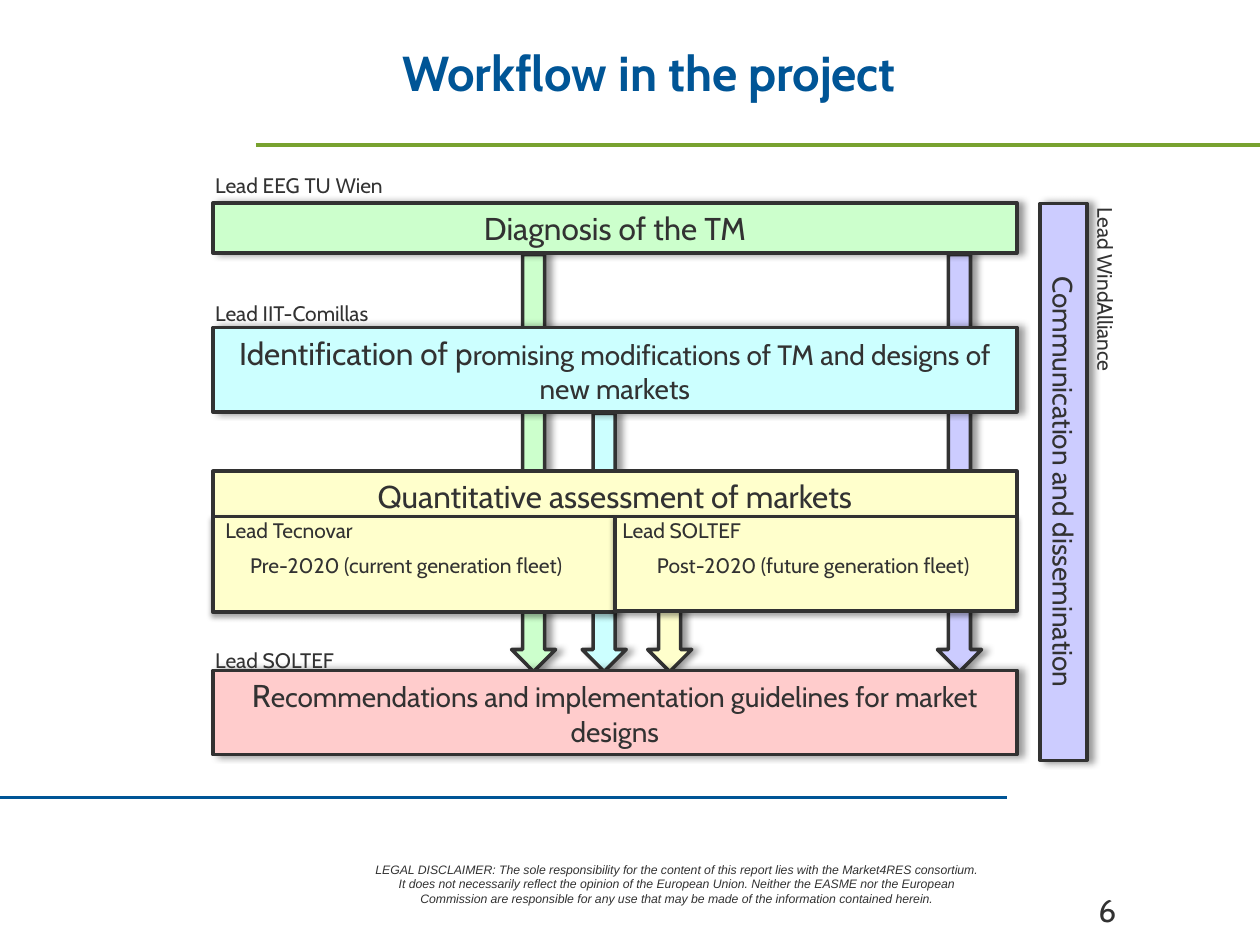
from typing import NamedTuple, Optional

from lxml.etree import SubElement
from pptx import Presentation
from pptx.dml.color import RGBColor
from pptx.enum.shapes import MSO_CONNECTOR as Connector, MSO_SHAPE as Shape
from pptx.enum.text import MSO_ANCHOR as Anchor, MSO_AUTO_SIZE as AutoSize, PP_ALIGN as Align
from pptx.oxml.ns import qn
from pptx.util import Emu, Pt

EMU_PER_PX = 9144
INK, BLUE, GREEN = "323232", "005596", "78A22F"
LIME, CYAN, YELLOW, LILAC, PINK = "CCFFCC", "CCFFFF", "FFFFCC", "CCCCFF", "FFCCCC"
STAGE_LEFT, STAGE_WIDTH = 169, 638
HALF_WIDTH = STAGE_WIDTH // 2
ARROW_WIDTH, ARROW_END = 35, 533
LABEL_WIDTH, LABEL_HEIGHT = 165, 30


class Run(NamedTuple):
    text: str
    size: int


class Shadow(NamedTuple):
    opacity: int
    blur: float
    distance: float
    angle: int


class Box(NamedTuple):
    left: int
    top: int
    width: int
    height: int
    fill: str
    runs: tuple[Run, ...] = ()
    shadow: Optional[Shadow] = None
    outlined: bool = True
    rotation: int = 0
    kind: Shape = Shape.RECTANGLE


class Label(NamedTuple):
    left: int
    top: int
    text: str
    rotation: int = 0


class Arrow(NamedTuple):
    left: int
    top: int
    fill: str


SIDE_SHADOW = Shadow(40, 4, 3, 0)
LOW_SHADOW = Shadow(35, 3.1, 1.8, 90)

ARROWS = (Arrow(514, 471, YELLOW), Arrow(744, 202, LILAC),
          Arrow(462, 328, CYAN), Arrow(406, 202, LIME))

STAGES = (
    Box(STAGE_LEFT, 161, STAGE_WIDTH, 40, LIME, (Run("Diagnosis of the TM", 18),), SIDE_SHADOW),
    Box(STAGE_LEFT, 532, STAGE_WIDTH, 67, PINK,
        (Run("R", 18),
         Run("ecommendations and implementation guidelines for market designs", 16)), SIDE_SHADOW),
    Box(STAGE_LEFT, 260, STAGE_WIDTH, 67, CYAN,
        (Run("Identification of p", 18),
         Run("romising modifications of TM and designs of new markets", 16)), SIDE_SHADOW),
    Box(623, 364, 442, 37, LILAC, (Run("Communication and dissemination", 16),), SIDE_SHADOW,
        rotation=90),
    Box(STAGE_LEFT, 374, STAGE_WIDTH, 40, YELLOW,
        (Run("Quantitative assessment of markets", 18),)),
    Box(STAGE_LEFT, 410, HALF_WIDTH, 76, YELLOW, shadow=LOW_SHADOW),
    Box(STAGE_LEFT + HALF_WIDTH, 410, HALF_WIDTH, 75, YELLOW, shadow=LOW_SHADOW),
    Box(177, 434, 291, 30, YELLOW, (Run("Pre-2020 (current generation fleet)", 12),),
        outlined=False),
    Box(500, 434, 291, 30, YELLOW, (Run("Post-2020 (future generation fleet)", 12),),
        outlined=False),
)

LABELS = (
    Label(161, 132, "Lead EEG TU Wien"),
    Label(161, 234, "Lead IIT-Comillas"),
    Label(161, 509, "Lead SOLTEF"),
    Label(795, 222, "Lead WindAlliance", 90),
    Label(169, 406, "Lead Tecnovar"),
    Label(484, 406, "Lead SOLTEF"),
)

DISCLAIMER = (
    "LEGAL DISCLAIMER: The sole responsibility for the content of this report lies with the "
    "Market4RES consortium. It does not necessarily reflect the opinion of the European Union. "
    "Neither the EASME nor the European Commission are responsible for any use that may be made "
    "of the information contained herein."
)


def px(length: int) -> Emu:
    """Turn a length in px into EMU."""
    return Emu(length * EMU_PER_PX)


def color(value: str) -> RGBColor:
    """Turn a hex string into a colour."""
    return RGBColor.from_string(value)


def write(shape, runs: tuple[Run, ...], align: Align = Align.LEFT, font: str = "Cabin",
          ink: str = INK, bold: bool = False, italic: bool = False) -> None:
    """Fill a shape with one wrapped paragraph set from the top."""
    frame = shape.text_frame
    frame.word_wrap = True
    frame.auto_size = AutoSize.NONE
    frame.vertical_anchor = Anchor.TOP
    paragraph = frame.paragraphs[0]
    paragraph.alignment = align
    for part in runs:
        run = paragraph.add_run()
        run.text = part.text
        run.font.name, run.font.size = font, Pt(part.size)
        run.font.bold, run.font.italic = bold, italic
        run.font.color.rgb = color(ink)


def add_shadow(shape, shadow: Shadow) -> None:
    """Give a shape a soft black outer shadow."""
    effects = shape._element.spPr.find(qn("a:effectLst"))
    outer = SubElement(effects, qn("a:outerShdw"), blurRad=str(Pt(shadow.blur)),
                       dist=str(Pt(shadow.distance)), dir=str(shadow.angle * 60000),
                       algn="tl", rotWithShape="0")
    black = SubElement(outer, qn("a:srgbClr"), val="000000")
    SubElement(black, qn("a:alpha"), val=str(shadow.opacity * 1000))


def draw_box(slide, box: Box) -> None:
    """Draw a filled shape with its text and shadow."""
    shape = slide.shapes.add_shape(box.kind, px(box.left), px(box.top),
                                   px(box.width), px(box.height))
    shape.rotation = box.rotation
    shape.fill.solid()
    shape.fill.fore_color.rgb = color(box.fill)
    if box.outlined:
        shape.line.color.rgb = color(INK)
        shape.line.width = Pt(2)
    else:
        shape.line.fill.background()
    shape.shadow.inherit = False
    if box.shadow:
        add_shadow(shape, box.shadow)
    if box.runs:
        write(shape, box.runs, Align.CENTER)


def draw_arrow(slide, arrow: Arrow) -> None:
    """Draw a block arrow down to the recommendations."""
    draw_box(slide, Box(arrow.left, arrow.top, ARROW_WIDTH, ARROW_END - arrow.top, arrow.fill,
                        shadow=SIDE_SHADOW, kind=Shape.DOWN_ARROW))


def draw_label(slide, label: Label) -> None:
    """Draw the name of a stage leader."""
    shape = slide.shapes.add_textbox(px(label.left), px(label.top),
                                     px(LABEL_WIDTH), px(LABEL_HEIGHT))
    shape.rotation = label.rotation
    write(shape, (Run(label.text, 12),))


def draw_rule(slide, start: int, end: int, y: int, ink: str) -> None:
    """Draw a horizontal rule."""
    rule = slide.shapes.add_connector(Connector.STRAIGHT, px(start), px(y), px(end), px(y))
    rule.line.color.rgb = color(ink)
    rule.line.width = Pt(2)
    SubElement(rule._element.spPr, qn("a:effectLst"))


def draw_title(slide, text: str) -> None:
    """Place and format the title placeholder."""
    title = slide.shapes.title
    title.left, title.top, title.width, title.height = px(154), px(29), px(732), px(70)
    title.text_frame.margin_left = 0
    write(title, (Run(text, 28),), Align.CENTER, ink=BLUE, bold=True)


def main() -> None:
    """Build the workflow slide."""
    presentation = Presentation()
    presentation.slide_width, presentation.slide_height = px(1000), px(750)
    slide = presentation.slides.add_slide(presentation.slide_layouts[5])
    draw_title(slide, "Workflow in the project")
    draw_rule(slide, 203, 1000, 115, GREEN)
    draw_rule(slide, 0, 799, 633, BLUE)
    disclaimer = slide.shapes.add_textbox(px(287), px(679), px(500), px(45))
    write(disclaimer, (Run(DISCLAIMER, 7),), Align.CENTER, font="Arial", italic=True)
    for arrow in ARROWS:
        draw_arrow(slide, arrow)
    for stage in STAGES:
        draw_box(slide, stage)
    for label in LABELS:
        draw_label(slide, label)
    number = slide.shapes.add_textbox(px(862), px(702), px(116), px(31))
    write(number, (Run("6", 18),))
    presentation.save("out.pptx")


if __name__ == "__main__":
    main()
